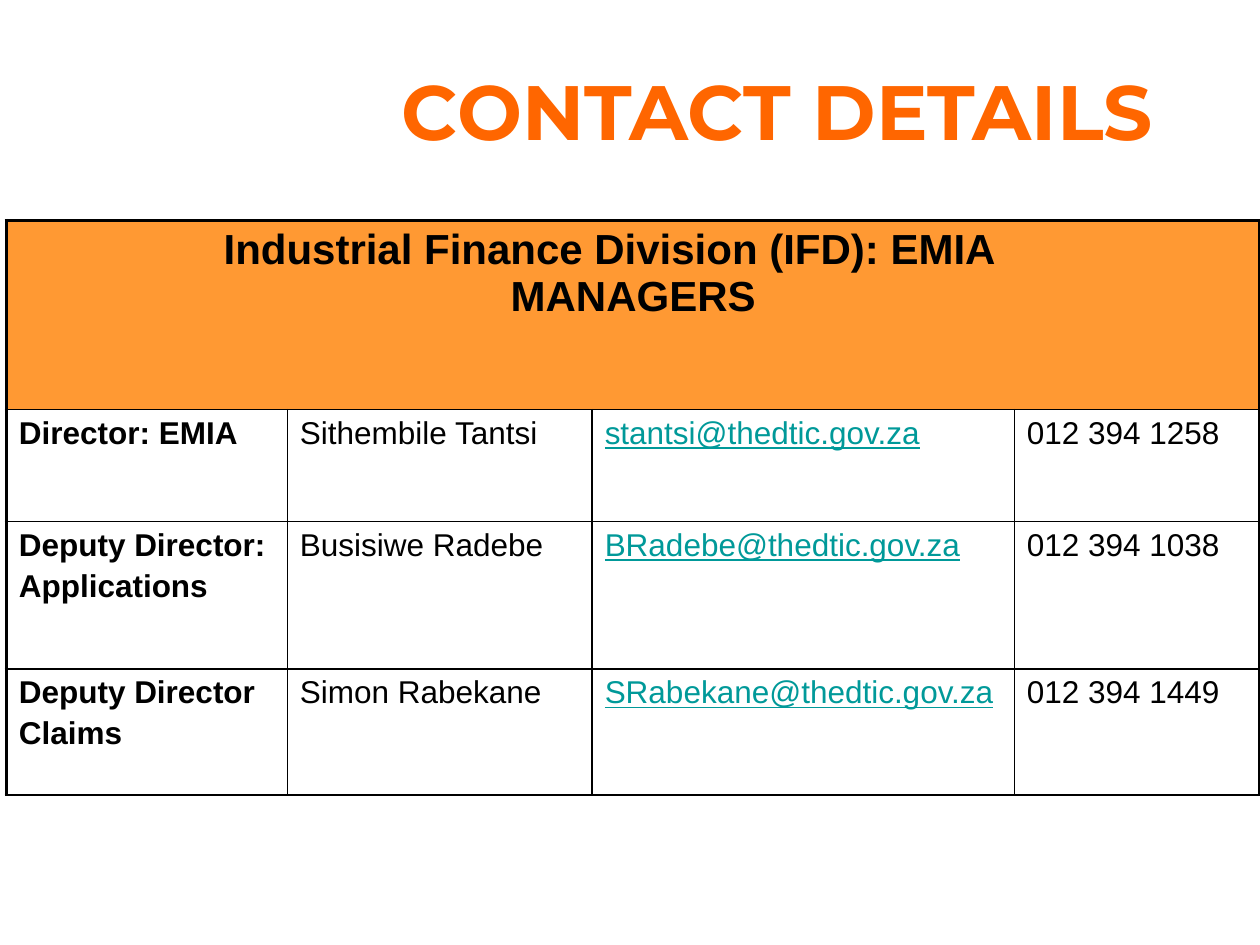
from dataclasses import dataclass

from lxml import etree
from pptx import Presentation
from pptx.dml.color import RGBColor
from pptx.enum.text import MSO_ANCHOR, PP_ALIGN
from pptx.oxml.ns import qn
from pptx.util import Inches, Pt

CENTER, LEFT = PP_ALIGN.CENTER, PP_ALIGN.LEFT
MIDDLE = MSO_ANCHOR.MIDDLE


@dataclass(frozen=True)
class Theme:
    orange: str = "FF6600"
    band: str = "FF9933"
    black: str = "000000"
    teal: str = "009999"
    head: str = "Montserrat"
    body: str = "Arial"
    title: int = 44
    large: int = 24
    text: int = 18
    thick: float = 2.25
    thin: float = 1


theme = Theme()


def write(frame, lines, size, color, bold=False, font=theme.body,
          align=LEFT, line=False, gap=0):
    for i, text in enumerate(lines):
        para = frame.paragraphs[0] if i == 0 else frame.add_paragraph()
        para.alignment = align
        if i:
            para.space_before = Pt(gap)
        run = para.add_run()
        run.text = text
        run.font.name = font
        run.font.size = Pt(size)
        run.font.bold = bold
        run.font.underline = line
        run.font.color.rgb = RGBColor.from_string(color)


def edge(cell, sides):
    props = cell._tc.get_or_add_tcPr()
    for i, (side, width) in enumerate(sides.items()):
        ln = etree.Element(qn("a:ln" + side), w=str(Pt(width)))
        fill = etree.SubElement(ln, qn("a:solidFill"))
        etree.SubElement(fill, qn("a:srgbClr"), val=theme.black)
        props.insert(i, ln)


deck = Presentation()
deck.slide_width, deck.slide_height = Inches(10), Inches(7.5)
slide = deck.slides.add_slide(deck.slide_layouts[6])

# Title
box = slide.shapes.add_textbox(Inches(2.67), Inches(0.33), Inches(7), Inches(1.08))
box.text_frame.word_wrap = True
box.text_frame.vertical_anchor = MIDDLE
write(box.text_frame, ["CONTACT DETAILS"], theme.title, theme.orange,
      bold=True, font=theme.head, align=CENTER)

# Table grid
people = [
    (["Director: EMIA"], "Sithembile Tantsi", "stantsi@thedtic.gov.za", "012 394 1258"),
    (["Deputy Director:", "Applications"], "Busisiwe Radebe",
     "BRadebe@thedtic.gov.za", "012 394 1038"),
    (["Deputy Director", "Claims"], "Simon Rabekane",
     "SRabekane@thedtic.gov.za", "012 394 1449"),
]
widths = [2.23, 2.42, 3.35, 1.95]
heights = [1.5, 0.89, 1.17, 1]
table = slide.shapes.add_table(
    len(heights), len(widths), Inches(0.05), Inches(1.75),
    Inches(sum(widths)), Inches(sum(heights))).table
for col, width in zip(table.columns, widths):
    col.width = Inches(width)
for row, height in zip(table.rows, heights):
    row.height = Inches(height)

# Fills and borders, with a thick outer frame
last = len(widths) - 1
for r in range(len(heights)):
    for c in range(len(widths)):
        cell = table.cell(r, c)
        if r == 0:
            cell.fill.solid()
            cell.fill.fore_color.rgb = RGBColor.from_string(theme.band)
        else:
            cell.fill.background()
        edge(cell, {
            "L": theme.thick if c == 0 else theme.thin,
            "R": theme.thick if c == last or r == 0 else theme.thin,
            "T": theme.thick if r == 0 else theme.thin,
            "B": theme.thin,
        })

# Heading band
band = table.cell(0, 0)
band.merge(table.cell(0, last))
write(band.text_frame, ["Industrial Finance Division (IFD): EMIA \t", "MANAGERS"],
      theme.large, theme.black, bold=True, align=CENTER)

# Contact rows
for r, (role, name, mail, phone) in enumerate(people, 1):
    write(table.cell(r, 0).text_frame, role, theme.text, theme.black, bold=True, gap=3)
    write(table.cell(r, 1).text_frame, [name], theme.text, theme.black)
    write(table.cell(r, 2).text_frame, [mail], theme.text, theme.teal, line=True)
    write(table.cell(r, 3).text_frame, [phone], theme.text, theme.black)

deck.save("out.pptx")
